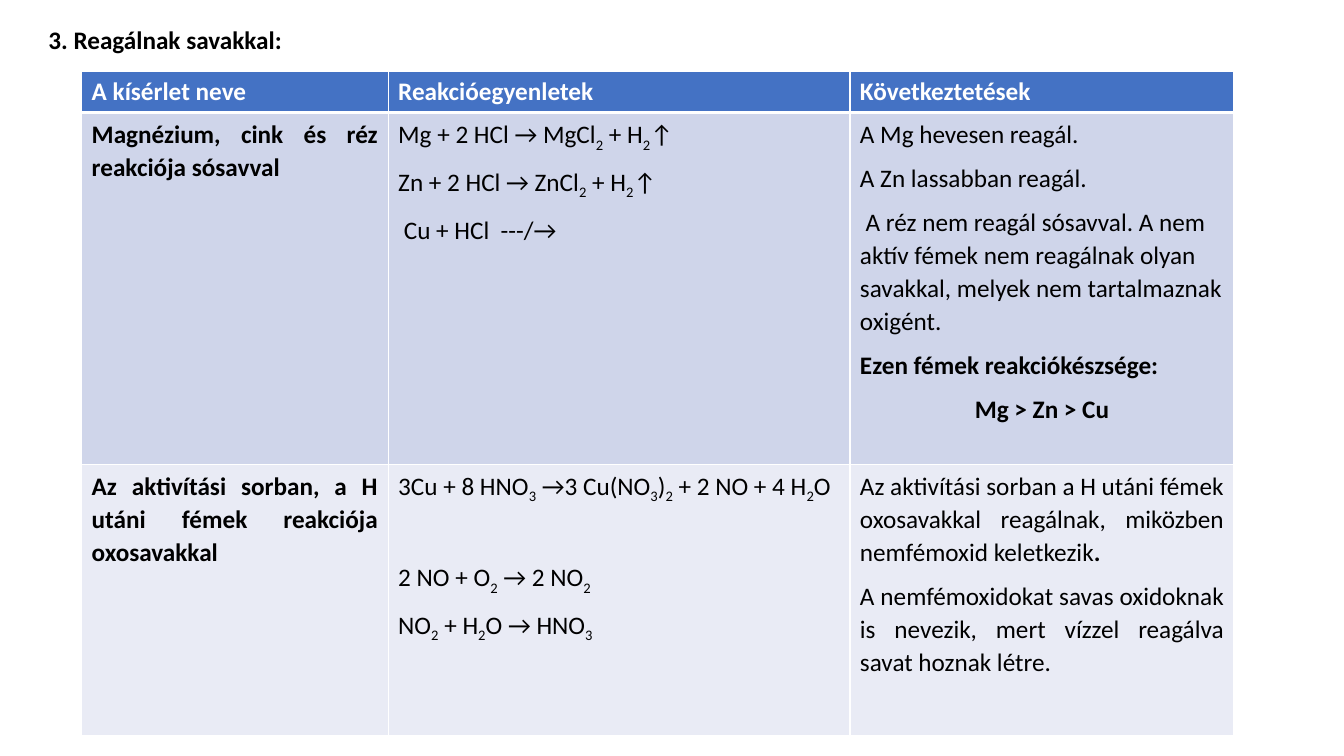
from dataclasses import dataclass

from lxml import etree
from pptx import Presentation, util as u
from pptx.dml import color
from pptx.enum import text as t
from pptx.oxml import ns

PX = 9144


@dataclass(frozen=True)
class Theme:
    font: str = "Calibri"
    size: int = 18
    ink: str = "000000"
    paper: str = "FFFFFF"
    header: str = "4472C4"
    metals: str = "CFD5EA"
    oxoacids: str = "E9EBF5"
    rule: int = 1
    header_rule: int = 3
    line_spacing: float = 1.07
    space_after: int = 8


@dataclass(frozen=True)
class Run:
    text: str
    bold: bool = False
    subscript: bool = False


@dataclass(frozen=True)
class Paragraph:
    runs: list[Run]
    align: t.PP_ALIGN = t.PP_ALIGN.JUSTIFY
    space_before: int = 0


@dataclass(frozen=True)
class Row:
    height: int
    fill: str
    cells: list[list[Paragraph]]


THEME = Theme()
LEFT = t.PP_ALIGN.LEFT
CENTER = t.PP_ALIGN.CENTER
JUSTIFY = t.PP_ALIGN.JUSTIFY


def px(length: int) -> u.Emu:
    return u.Emu(length * PX)


def plain(text: str, align: t.PP_ALIGN = JUSTIFY) -> Paragraph:
    return Paragraph([Run(text)], align)


def strong(text: str, align: t.PP_ALIGN = JUSTIFY) -> Paragraph:
    return Paragraph([Run(text, bold=True)], align)


def equation(formula: str, space_before: int = 0) -> Paragraph:
    parts = enumerate(formula.split("_"))
    runs = [Run(part, subscript=i % 2 == 1) for i, part in parts if part]
    return Paragraph(runs, space_before=space_before)


COLUMN_WIDTHS = [304, 458, 381]
HEADINGS = ["A kísérlet neve", "Reakcióegyenletek", "Következtetések"]
ROWS = [
    Row(39, THEME.header, [[strong(heading, LEFT)] for heading in HEADINGS]),
    Row(349, THEME.metals, [
        [strong("Magnézium, cink és réz reakciója sósavval")],
        [
            equation("Mg + 2 HCl → MgCl_2_ + H_2_↑"),
            equation("Zn + 2 HCl → ZnCl_2_ + H_2_↑"),
            plain(" Cu + HCl  ---/→"),
        ],
        [
            plain("A Mg hevesen reagál.", LEFT),
            plain("A Zn lassabban reagál.", LEFT),
            plain(" A réz nem reagál sósavval. A nem aktív fémek nem reagálnak "
                  "olyan savakkal, melyek nem tartalmaznak oxigént.", LEFT),
            strong("Ezen fémek reakciókészsége:", LEFT),
            strong("Mg > Zn > Cu", CENTER),
        ],
    ]),
    Row(269, THEME.oxoacids, [
        [strong("Az aktivítási sorban, a H utáni fémek reakciója oxosavakkal")],
        [
            equation("3Cu + 8 HNO_3_ →3 Cu(NO_3_)_2_ + 2 NO + 4 H_2_O"),
            equation("2 NO + O_2_ → 2 NO_2_", space_before=31),
            equation("NO_2_ + H_2_O → HNO_3_"),
        ],
        [
            Paragraph([
                Run("Az aktivítási sorban a H utáni fémek oxosavakkal reagálnak, "
                    "miközben nemfémoxid keletkezik"),
                Run(".", bold=True),
            ]),
            plain("A nemfémoxidokat savas oxidoknak is nevezik, mert vízzel "
                  "reagálva savat hoznak létre."),
        ],
    ]),
]


def add_run(paragraph, content: Run, ink: str) -> None:
    run = paragraph.add_run()
    run.text = content.text
    run.font.name = THEME.font
    run.font.size = u.Pt(THEME.size)
    run.font.bold = content.bold
    run.font.color.rgb = color.RGBColor.from_string(ink)
    if content.subscript:
        run.font._element.set("baseline", "-25000")


def write_cell(cell, paragraphs: list[Paragraph], is_header: bool) -> None:
    frame = cell.text_frame
    for i, content in enumerate(paragraphs):
        paragraph = frame.add_paragraph() if i else frame.paragraphs[0]
        paragraph.alignment = content.align
        if not is_header:
            paragraph.line_spacing = THEME.line_spacing
            paragraph.space_after = u.Pt(THEME.space_after)
        if content.space_before:
            paragraph.space_before = u.Pt(content.space_before)
        for run in content.runs:
            add_run(paragraph, run, THEME.paper if is_header else THEME.ink)


def set_borders(cell, top: int, bottom: int) -> None:
    properties = cell._tc.get_or_add_tcPr()
    widths = {"lnL": THEME.rule, "lnR": THEME.rule, "lnT": top, "lnB": bottom}
    for i, (side, width) in enumerate(widths.items()):
        line = etree.Element(ns.qn(f"a:{side}"), w=str(u.Pt(width)))
        fill = etree.SubElement(line, ns.qn("a:solidFill"))
        etree.SubElement(fill, ns.qn("a:srgbClr"), val=THEME.paper)
        properties.insert(i, line)


def add_title(slide) -> None:
    title = slide.shapes.title
    title.left, title.top, title.width, title.height = map(px, (38, 19, 667, 40))
    frame = title.text_frame
    frame.word_wrap = True
    frame.auto_size = t.MSO_AUTO_SIZE.NONE
    frame.vertical_anchor = t.MSO_ANCHOR.TOP
    heading = frame.paragraphs[0]
    heading.alignment = LEFT
    add_run(heading, Run("3. Reagálnak savakkal:", bold=True), THEME.ink)


def add_reactions(slide) -> None:
    height = sum(row.height for row in ROWS)
    reactions = slide.shapes.add_table(
        len(ROWS), len(COLUMN_WIDTHS),
        px(81), px(71), px(sum(COLUMN_WIDTHS)), px(height)).table
    for column, width in zip(reactions.columns, COLUMN_WIDTHS):
        column.width = px(width)
    for r, row in enumerate(ROWS):
        reactions.rows[r].height = px(row.height)
        top = THEME.header_rule if r == 1 else THEME.rule
        bottom = THEME.header_rule if r == 0 else THEME.rule
        for c, paragraphs in enumerate(row.cells):
            cell = reactions.cell(r, c)
            cell.fill.solid()
            cell.fill.fore_color.rgb = color.RGBColor.from_string(row.fill)
            set_borders(cell, top, bottom)
            write_cell(cell, paragraphs, is_header=r == 0)


def main() -> None:
    deck = Presentation()
    deck.slide_width, deck.slide_height = px(1333), px(750)
    slide = deck.slides.add_slide(deck.slide_layouts.get_by_name("Title Only"))
    add_title(slide)
    add_reactions(slide)
    deck.save("out.pptx")


if __name__ == "__main__":
    main()
